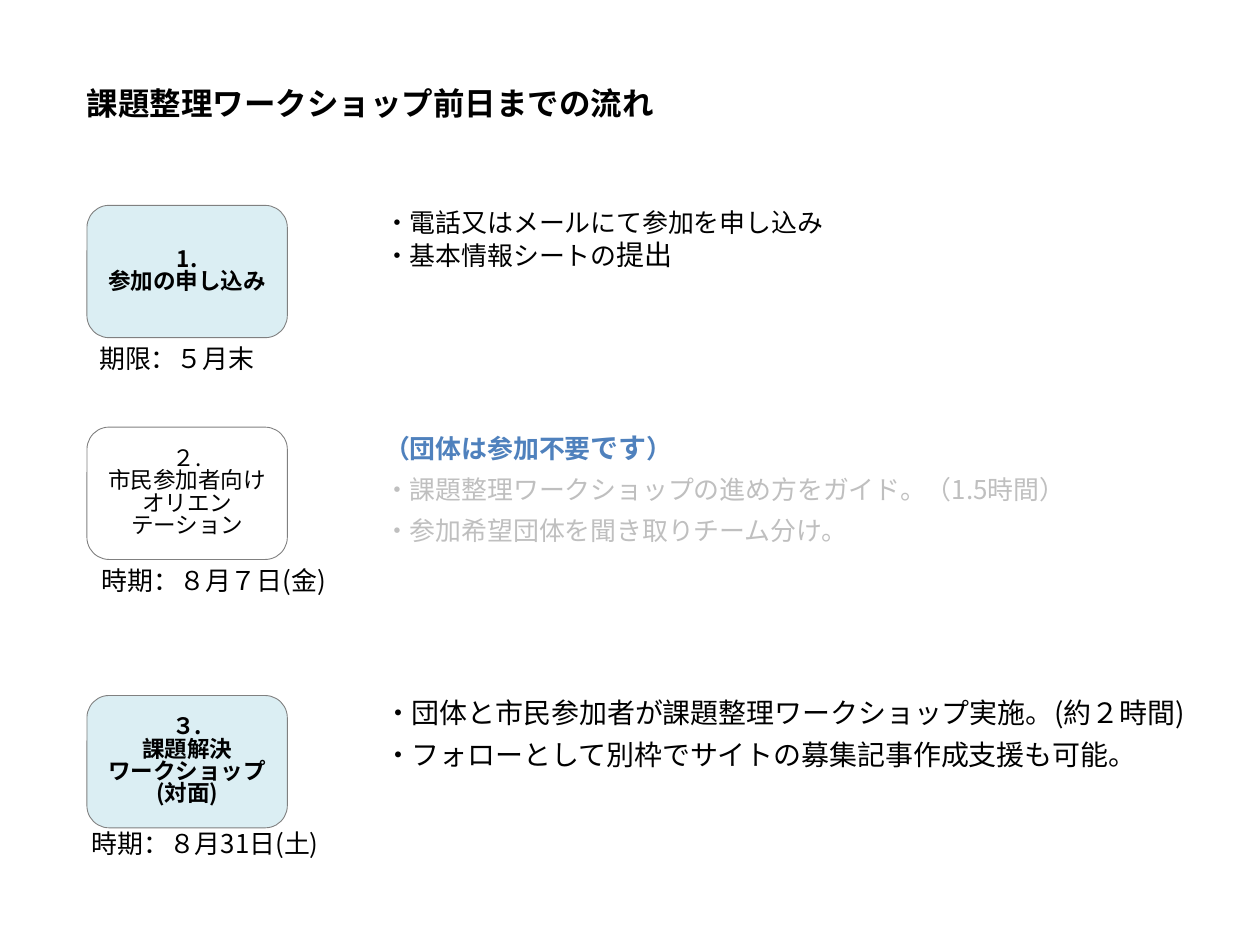
from lxml import etree
from pptx import Presentation
from pptx.dml.color import RGBColor
from pptx.enum.shapes import MSO_SHAPE
from pptx.enum.text import MSO_ANCHOR, PP_ALIGN
from pptx.oxml.ns import qn
from pptx.util import Inches, Pt

ROUNDED = MSO_SHAPE.ROUNDED_RECTANGLE
MIDDLE = MSO_ANCHOR.MIDDLE
CENTER = PP_ALIGN.CENTER
BLACK = RGBColor(0x00, 0x00, 0x00)
GRAY = RGBColor(0x80, 0x80, 0x80)
PALE_GRAY = RGBColor(0xBF, 0xBF, 0xBF)
BLUE = RGBColor(0x4F, 0x81, 0xBD)
TEAL = RGBColor(0x4B, 0xAC, 0xC6)
JAPANESE = "Noto Sans CJK JP"

SLIDE_W, SLIDE_H = 10, 7.5
STEP_X, STEP_W, STEP_H = 0.69, 1.59, 1.05
DETAIL_X = 2.95
BODY, LARGE, STEP_SIZE = 14.8, 16, 12.9

STEPS = [
    dict(top=1.63, heading=["1.", "参加の申し込み"], active=True,
         date="期限：５月末", date_box=(0, 1.09, 2.62, 0.3),
         details=[(["・電話又はメールにて参加を申し込み"], BODY, BLACK, False),
                  (["・基本情報シートの", "提出"], BODY, BLACK, False)],
         detail_box=(0, 6.36), line_spacing=0.85, gap=2.5),
    dict(top=3.39, heading=["２.", "市民参加者向け", "オリエン", "テーション"], active=False,
         date="時期：８月７日(金)", date_box=(0.02, 1.09, 2.25, 0.35),
         details=[(["（団体は参加不要", "です", "）"], BODY, BLUE, True),
                  (["・課題整理ワークショップの進め方をガイド。（1.5時間）"], BODY, PALE_GRAY, False),
                  (["・参加希望団体を聞き取りチーム分け。"], BODY, PALE_GRAY, False)],
         detail_box=(0.03, 6.36), line_spacing=0.8, gap=9),
    dict(top=5.52, heading=["３.", "課題解決", "ワークショップ", "(対面)"], active=True,
         date="時期：８月31日(土)", date_box=(-0.06, 1.05, 2.33, 0.37),
         details=[(["・団体と市民参加者が課題整理ワークショップ実施。(約２時間)"], LARGE, BLACK, False),
                  (["・フォローとして別枠でサイトの募集記事作成支援も可能。"], LARGE, BLACK, False)],
         detail_box=(0, 6.93), line_spacing=0.8, gap=9),
]


def set_font(font, size, color, bold=False, name=JAPANESE):
    font.name, font.size, font.bold = name, Pt(size), bold
    font.color.rgb = color
    if name == JAPANESE:
        etree.SubElement(font._element, qn("a:ea")).set("typeface", name)


def add_text_frame(slide, left, top, width, height):
    frame = slide.shapes.add_textbox(*map(Inches, (left, top, width, height))).text_frame
    frame.word_wrap = True
    return frame


def add_lines(frame, lines, line_spacing, gap=0):
    for index, (pieces, size, color, bold) in enumerate(lines):
        line = frame.paragraphs[0] if index == 0 else frame.add_paragraph()
        line.line_spacing = line_spacing
        line.space_before = Pt(gap if index else 0)
        set_font(line.font, size, color, bold)
        for position, piece in enumerate(pieces):
            run = line.add_run()
            run.text = piece
            set_font(run.font, LARGE if position == 1 else size, color, bold)


def add_title(slide, left, top, width, height):
    title = add_text_frame(slide, left, top, width, height).paragraphs[0]
    run = title.add_run()
    run.text = "課題整理ワークショップ前日までの流れ"
    set_font(run.font, 18, BLACK, True, "Arial")


def add_step_box(slide, left, top, heading, active):
    box = slide.shapes.add_shape(ROUNDED, *map(Inches, (left, top, STEP_W, STEP_H)))
    box.shadow.inherit = False
    box.line.color.rgb = GRAY
    box.line.width = Pt(0.5)
    if active:
        box.fill.solid()
        box.fill.fore_color.rgb = TEAL
        tint = box._element.spPr.find(qn("a:solidFill")).find(qn("a:srgbClr"))
        etree.SubElement(tint, qn("a:alpha")).set("val", "20000")
    else:
        box.fill.background()
    frame = box.text_frame
    frame.word_wrap = True
    frame.vertical_anchor = MIDDLE
    add_lines(frame, [([line], STEP_SIZE, BLACK, active) for line in heading], 0.82)
    for line in frame.paragraphs:
        line.alignment = CENTER


def add_step(slide, left, step):
    top = step["top"]
    add_step_box(slide, left, top, step["heading"], step["active"])
    dx, dy, width, height = step["date_box"]
    date = add_text_frame(slide, left + dx, top + dy, width, height)
    add_lines(date, [([step["date"]], BODY, BLACK, False)], 0.8)
    dy, width = step["detail_box"]
    details = add_text_frame(slide, DETAIL_X, top + dy, width, STEP_H)
    add_lines(details, step["details"], step["line_spacing"], step["gap"])


def main():
    deck = Presentation()
    deck.slide_width, deck.slide_height = Inches(SLIDE_W), Inches(SLIDE_H)
    slide = deck.slides.add_slide(deck.slide_layouts[6])
    add_title(slide, 0.59, 0.62, 8.9, 0.4)
    for step in STEPS:
        add_step(slide, STEP_X, step)
    deck.save("out.pptx")


if __name__ == "__main__":
    main()
